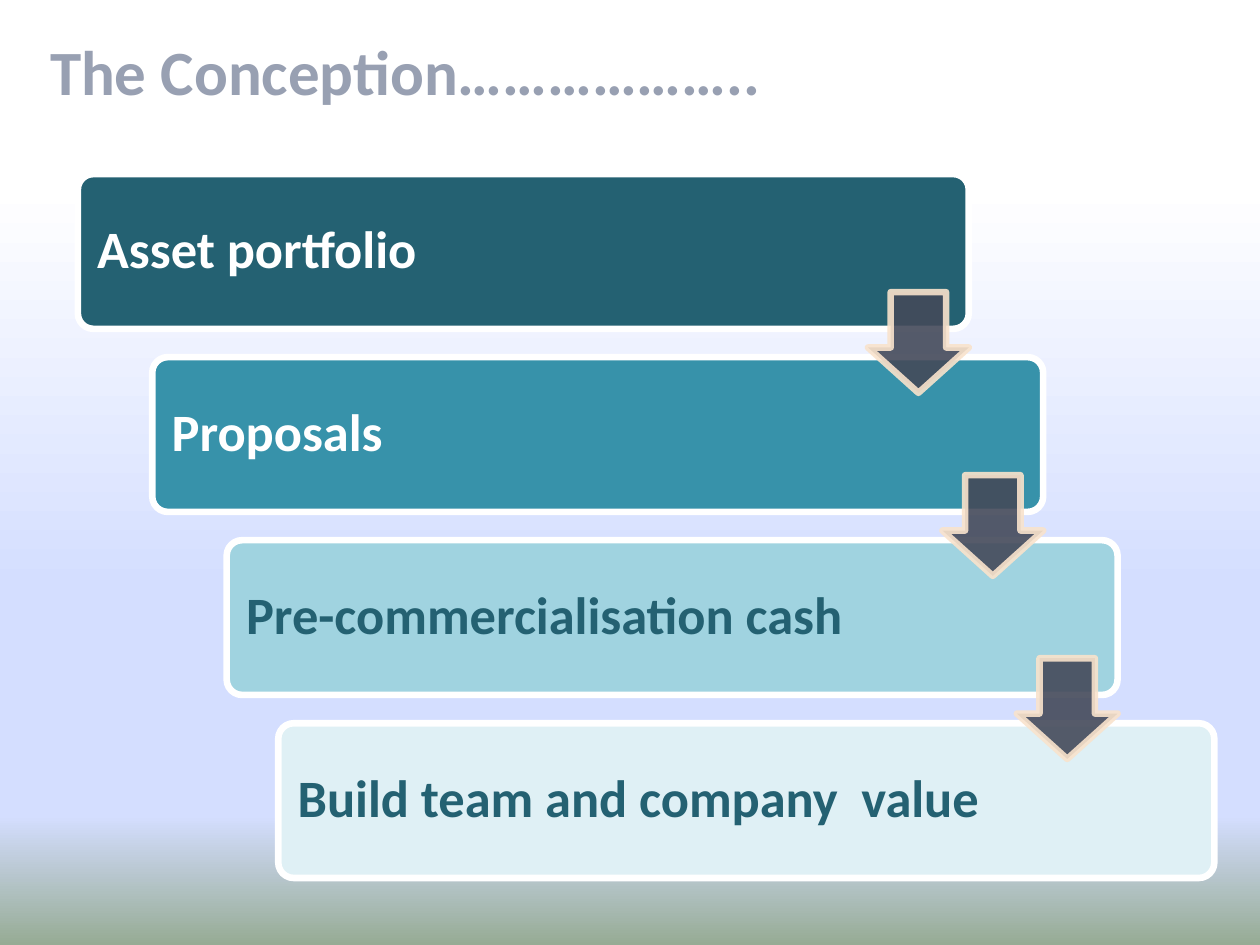
from dataclasses import dataclass

from lxml.etree import SubElement
from pptx import Presentation
from pptx.dml.color import RGBColor
from pptx.enum.shapes import MSO_SHAPE
from pptx.enum.text import MSO_ANCHOR, PP_ALIGN
from pptx.oxml.ns import qn
from pptx.shapes.autoshape import Shape
from pptx.slide import Slide
from pptx.text.text import TextFrame
from pptx.util import Cm, Pt

FIRST_TOP, STEP_PITCH, STEP_HEIGHT = 3.51, 3.69, 3.12
ARROW_SIZE, ARROW_DROP = 2.03, 2.38
LINE_WIDTH = 3.78
BACKGROUND_STOPS = [(0, "FFFFFF"), (53, "D4DEFF"), (83, "D4DEFF"), (100, "96AB94")]


@dataclass
class Step:
    """A stage of the staircase, with lengths in centimetres."""

    text: str
    left: float
    width: float
    fill: str
    text_color: str


STEPS = [
    Step("Asset portfolio", 1.57, 17.96, "246172", "FFFFFF"),
    Step("Proposals", 3.07, 17.96, "3792AA", "FFFFFF"),
    Step("Pre-commercialisation cash", 4.57, 17.96, "A0D3E0", "246172"),
    Step("Build team and company  value", 5.61, 18.87, "DFF0F5", "246172"),
]


def color(value: str) -> RGBColor:
    """Turn a hex string into a colour."""
    return RGBColor.from_string(value)


def add_block(slide: Slide, kind: MSO_SHAPE, left: float, top: float,
              width: float, height: float) -> Shape:
    """Add a preset shape without shadow."""
    shape = slide.shapes.add_shape(kind, Cm(left), Cm(top), Cm(width), Cm(height))
    shape.shadow.inherit = False
    return shape


def paint(shape: Shape, fill: str, line: str) -> None:
    """Give a shape a solid fill and outline."""
    shape.fill.solid()
    shape.fill.fore_color.rgb = color(fill)
    shape.line.color.rgb = color(line)
    shape.line.width = Pt(LINE_WIDTH)


def write(frame: TextFrame, text: str, size: float, text_color: str) -> None:
    """Write one bold, left-aligned, vertically centred line."""
    frame.word_wrap = True
    frame.vertical_anchor = MSO_ANCHOR.MIDDLE
    paragraph = frame.paragraphs[0]
    paragraph.text = text
    paragraph.alignment = PP_ALIGN.LEFT
    paragraph.font.name = "Calibri"
    paragraph.font.size = Pt(size)
    paragraph.font.bold = True
    paragraph.font.color.rgb = color(text_color)


def add_background(slide: Slide) -> None:
    """Add the vertical gradient behind the staircase."""
    shape = add_block(slide, MSO_SHAPE.RECTANGLE, 0, 3.73, 25.4, 15.32)
    shape.line.fill.background()
    shape.fill.gradient()
    shape.fill.gradient_angle = 270
    stops = shape._element.spPr.find(".//" + qn("a:gsLst"))
    for stop in list(stops):
        stops.remove(stop)
    for percent, value in BACKGROUND_STOPS:
        stop = SubElement(stops, qn("a:gs"), pos=str(percent * 1000))
        SubElement(stop, qn("a:srgbClr"), val=value)


def add_title(slide: Slide, text: str) -> None:
    """Add the heading."""
    box = slide.shapes.add_textbox(Cm(0.76), Cm(0.43), Cm(24.64), Cm(1.98))
    box.text_frame.margin_right = Cm(0.13)
    write(box.text_frame, text, 36, "98A0B2")


def add_step(slide: Slide, step: Step, top: float) -> None:
    """Add one labelled stage."""
    shape = add_block(slide, MSO_SHAPE.ROUNDED_RECTANGLE, step.left, top, step.width, STEP_HEIGHT)
    shape.adjustments[0] = 0.1
    paint(shape, step.fill, "FFFFFF")
    frame = shape.text_frame
    frame.margin_left = frame.margin_right = Cm(0.3)
    write(frame, step.text, 30, step.text_color)
    frame.paragraphs[0].line_spacing = 0.9


def add_arrow(slide: Slide, step: Step, top: float) -> None:
    """Add the translucent arrow leading down from a stage's right end."""
    left = step.left + step.width - ARROW_SIZE
    arrow = add_block(slide, MSO_SHAPE.DOWN_ARROW, left, top + ARROW_DROP, ARROW_SIZE, ARROW_SIZE)
    arrow.adjustments[0] = 0.55
    arrow.adjustments[1] = 0.45
    paint(arrow, "444A5A", "F9E3CC")
    for tint in arrow._element.spPr.iter(qn("a:srgbClr")):
        SubElement(tint, qn("a:alpha"), val="90000")


def main() -> None:
    """Build and save the slide."""
    presentation = Presentation()
    presentation.slide_width, presentation.slide_height = Cm(25.4), Cm(19.05)
    slide = presentation.slides.add_slide(presentation.slide_layouts[6])
    add_background(slide)
    add_title(slide, "The Conception………………..")
    tops = [FIRST_TOP + index * STEP_PITCH for index in range(len(STEPS))]
    for step, top in zip(STEPS, tops):
        add_step(slide, step, top)
    for step, top in zip(STEPS[:-1], tops):
        add_arrow(slide, step, top)
    presentation.save("out.pptx")


if __name__ == "__main__":
    main()
